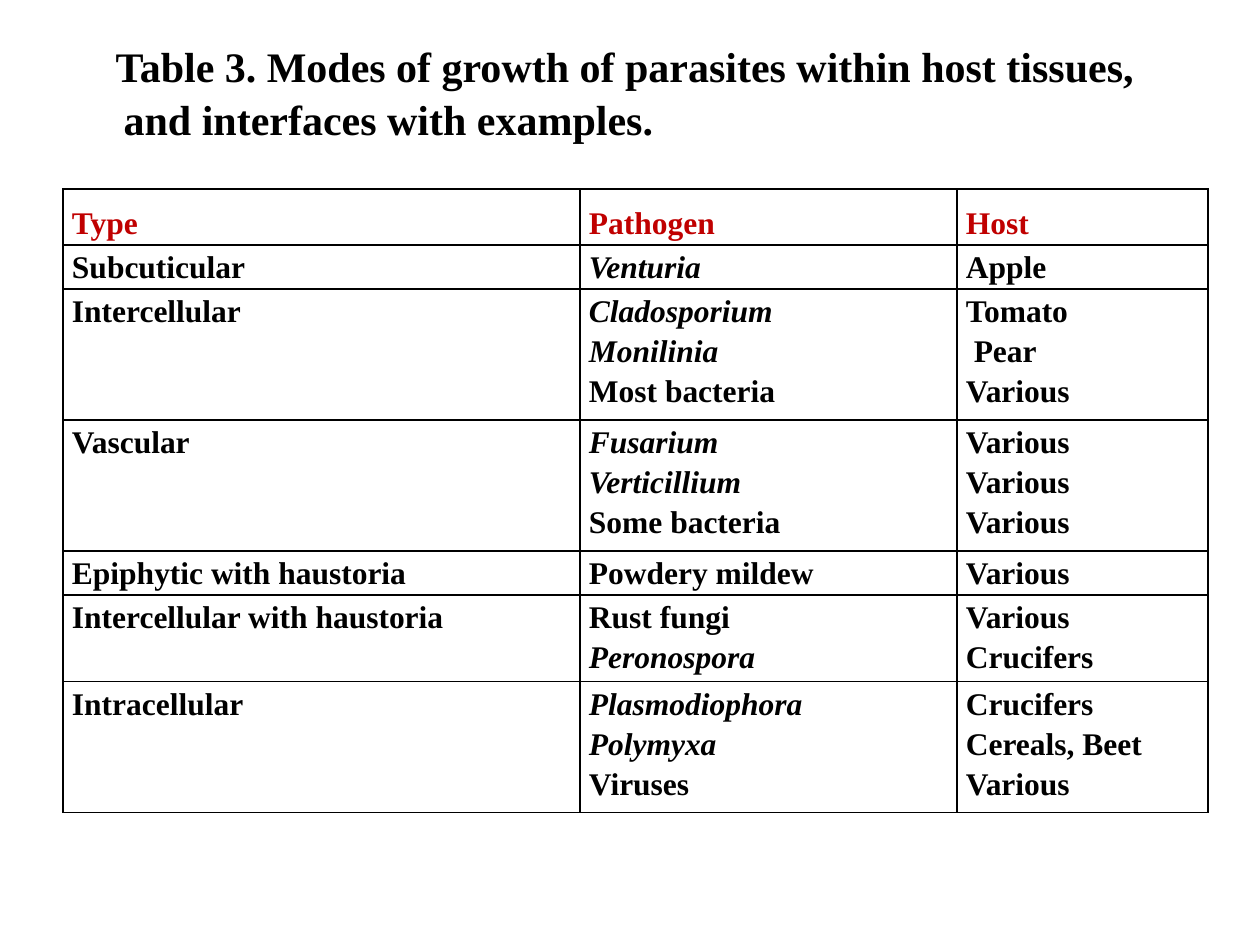
from dataclasses import dataclass
from typing import Any

from lxml import etree
from pptx import Presentation
from pptx.dml.color import RGBColor
from pptx.enum import text
from pptx.oxml.ns import qn
from pptx.util import Emu, Pt

BLACK = RGBColor(0x00, 0x00, 0x00)
RED = RGBColor(0xC0, 0x00, 0x00)
PIXELS_PER_INCH = 126
TITLE = "Table 3. Modes of growth of parasites within host tissues, and interfaces with examples."
COLUMN_WIDTHS = [517, 377, 251]
ROW_HEIGHTS = [56, 44, 131, 131, 44, 87, 131]
ROWS = [
    ("Type", "Pathogen", "Host"),
    ("Subcuticular", "Venturia", "Apple"),
    ("Intercellular", "Cladosporium\nMonilinia\nMost bacteria", "Tomato\n Pear\nVarious"),
    ("Vascular", "Fusarium\nVerticillium\nSome bacteria", "Various\nVarious\nVarious"),
    ("Epiphytic with haustoria", "Powdery mildew", "Various"),
    ("Intercellular with haustoria", "Rust fungi\nPeronospora", "Various\nCrucifers"),
    ("Intracellular", "Plasmodiophora\nPolymyxa\nViruses", "Crucifers\nCereals, Beet\nVarious"),
]
GENERA = {"Venturia", "Cladosporium", "Monilinia", "Fusarium", "Verticillium",
          "Peronospora", "Plasmodiophora", "Polymyxa"}


def px(length):
    """Turn whole pixels into EMU."""
    return Emu(round(length * 914400 / PIXELS_PER_INCH))


@dataclass
class SlideWriter:
    """Hold the style and the current slide."""

    slide: Any
    font_name: str = "Times New Roman"
    title_size: int = 24
    table_size: int = 18

    def format_paragraph(self, paragraph, size, color, alignment, spacing):
        """Apply the shared bold style to a paragraph and its runs."""
        paragraph.alignment = alignment
        paragraph.line_spacing = spacing
        for run in paragraph.runs:
            run.font.name = self.font_name
            run.font.size = Pt(size)
            run.font.bold = True
            run.font.italic = run.text in GENERA
            run.font.color.rgb = color

    def title(self, wording, left, top, width, height):
        """Fill the title placeholder with a hanging paragraph."""
        shape = self.slide.shapes.title
        shape.left, shape.top, shape.width, shape.height = map(px, (left, top, width, height))
        frame = shape.text_frame
        frame.text = wording
        frame.word_wrap = True
        frame.auto_size = text.MSO_AUTO_SIZE.NONE
        frame.vertical_anchor = text.MSO_ANCHOR.TOP
        paragraph = frame.paragraphs[0]
        self.format_paragraph(paragraph, self.title_size, BLACK, text.PP_ALIGN.LEFT, 1.05)
        properties = paragraph._p.get_or_add_pPr()
        properties.set("marL", str(px(48)))
        properties.set("indent", str(px(-8)))

    def border(self, cell):
        """Draw a thin black line on each side of a cell."""
        properties = cell._tc.get_or_add_tcPr()
        for position, side in enumerate(("lnL", "lnR", "lnT", "lnB")):
            line = etree.Element(qn(f"a:{side}"), w=str(Pt(1)))
            fill = etree.SubElement(line, qn("a:solidFill"))
            etree.SubElement(fill, qn("a:srgbClr"), val=str(BLACK))
            properties.insert(position, line)

    def cell(self, cell, wording, color, spacing):
        """Write and format one table cell."""
        cell.text_frame.text = wording
        cell.margin_left = cell.margin_right = px(9)
        cell.margin_top = cell.margin_bottom = 0
        cell.vertical_anchor = text.MSO_ANCHOR.TOP
        cell.fill.background()
        self.border(cell)
        for paragraph in cell.text_frame.paragraphs:
            self.format_paragraph(paragraph, self.table_size, color, text.PP_ALIGN.JUSTIFY, spacing)

    def table(self, rows, left, top, widths, heights):
        """Add a ruled table whose first row is the heading."""
        frame = self.slide.shapes.add_table(
            len(rows), len(widths), px(left), px(top), px(sum(widths)), px(sum(heights)))
        table = frame.table
        table.first_row = table.horz_banding = False
        for column, width in zip(table.columns, widths):
            column.width = px(width)
        for index, (row, height) in enumerate(zip(rows, heights)):
            table.rows[index].height = px(height)
            color, spacing = (BLACK, 1.15) if index else (RED, 1.5)
            for cell, wording in zip(table.rows[index].cells, row):
                self.cell(cell, wording, color, spacing)


def main():
    """Build the slide and save it."""
    presentation = Presentation()
    presentation.slide_width, presentation.slide_height = px(1260), px(945)
    writer = SlideWriter(presentation.slides.add_slide(presentation.slide_layouts[5]))
    writer.title(TITLE, 63, 32, 1144, 73)
    writer.table(ROWS, 63, 189, COLUMN_WIDTHS, ROW_HEIGHTS)
    presentation.save("out.pptx")


if __name__ == "__main__":
    main()
